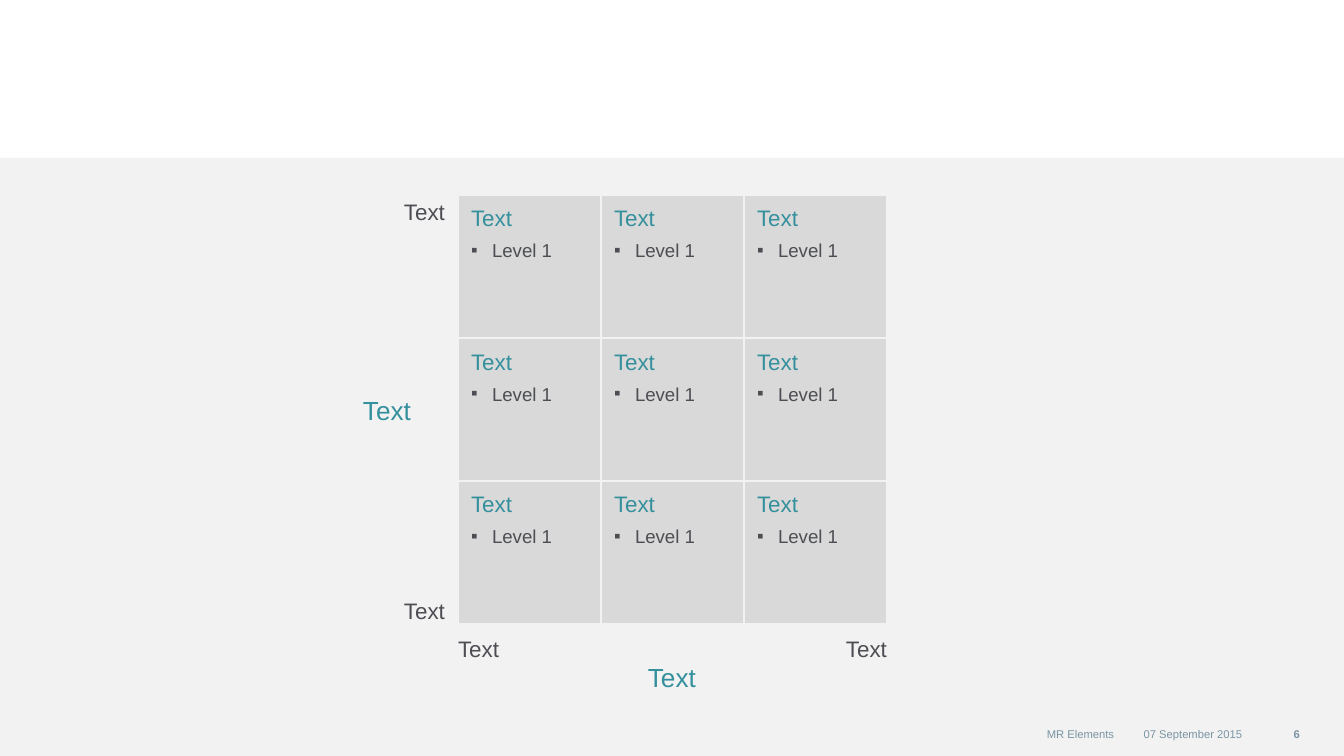
from lxml.etree import SubElement
from pptx import Presentation
from pptx.dml.color import RGBColor
from pptx.enum.shapes import MSO_SHAPE
from pptx.enum.text import MSO_ANCHOR, MSO_AUTO_SIZE, PP_ALIGN
from pptx.oxml.ns import qn
from pptx.util import Pt

EMU_PER_PX = 914400 / 134.4
SLIDE_W, SLIDE_H = 1344, 756
GRID_LEFT, GRID_TOP, CELL, COUNT = 458, 195, 143, 3
GRID_END = GRID_LEFT + COUNT * CELL
GRID_BOTTOM = GRID_TOP + COUNT * CELL

COLORS = {
    "panel": "F2F2F2",
    "cell": "D9D9D9",
    "teal": "34909C",
    "dark": "4D4E53",
    "footer": "7A94A3",
}
HEADING = {"size": Pt(12), "color": "teal"}
BULLET = {"size": Pt(10), "color": "dark"}
END_LABEL = {"size": Pt(12), "color": "dark"}
AXIS_TITLE = {"size": Pt(14), "color": "teal"}
FOOTER = {"size": Pt(6), "color": "footer"}

LEFT, CENTER, RIGHT = PP_ALIGN.LEFT, PP_ALIGN.CENTER, PP_ALIGN.RIGHT
TOP, MIDDLE, BOTTOM = MSO_ANCHOR.TOP, MSO_ANCHOR.MIDDLE, MSO_ANCHOR.BOTTOM


def px(value):
    return round(value * EMU_PER_PX)


def rgb(name):
    return RGBColor.from_string(COLORS[name])


def set_frame(tf, insets, anchor):
    """Set the insets (left, top, right, bottom) and the vertical anchor."""
    for side, inset in zip(("left", "top", "right", "bottom"), insets):
        setattr(tf, f"margin_{side}", px(inset))
    tf.vertical_anchor = anchor


def add_text(p, text, style):
    r = p.add_run()
    r.text = text
    for name, value in {"name": "Arial", **style}.items():
        if name == "color":
            r.font.color.rgb = rgb(value)
        else:
            setattr(r.font, name, value)


def set_bullet(p):
    pPr = p._p.get_or_add_pPr()
    pPr.set("marL", str(px(21)))
    pPr.set("indent", str(-px(21)))
    SubElement(pPr, qn("a:buFont"), typeface="Arial")
    SubElement(pPr, qn("a:buChar"), char="▪")


def add_rect(slide, box, fill):
    sp = slide.shapes.add_shape(MSO_SHAPE.RECTANGLE, *map(px, box))
    sp.shadow.inherit = False
    sp.fill.solid()
    sp.fill.fore_color.rgb = rgb(fill)
    sp.line.fill.background()
    return sp


def add_cell(slide, row, col):
    box = (GRID_LEFT + col * CELL, GRID_TOP + row * CELL, CELL, CELL)
    sp = add_rect(slide, box, "cell")
    sp.line.color.rgb = rgb("panel")
    sp.line.width = Pt(1)
    tf = sp.text_frame
    tf.word_wrap = True
    set_frame(tf, (13, 7, 13, 7), TOP)
    heading, item = tf.paragraphs[0], tf.add_paragraph()
    for p in (heading, item):
        for name, value in {"alignment": LEFT, "line_spacing": 1.1,
                            "space_after": Pt(3)}.items():
            setattr(p, name, value)
    set_bullet(item)
    add_text(heading, "Text", HEADING)
    add_text(item, "Level 1", BULLET)


def add_box(slide, box, text, style, align, anchor, insets):
    sp = slide.shapes.add_textbox(*map(px, box))
    tf = sp.text_frame
    set_frame(tf, insets, anchor)
    p = tf.paragraphs[0]
    p.alignment = align
    add_text(p, text, style)
    return tf


def add_label(slide, *args):
    """Add an axis label that grows with its text."""
    tf = add_box(slide, *args)
    tf.word_wrap = False
    tf.auto_size = MSO_AUTO_SIZE.SHAPE_TO_FIT_TEXT
    tf.paragraphs[0].line_spacing = 1.1


def add_footer(slide, left, width, text, style):
    box = (left, 719, width, 30)
    tf = add_box(slide, box, text, style, RIGHT, MIDDLE, (0, 0, 0, 0))
    tf.word_wrap = True


def main():
    prs = Presentation()
    prs.slide_width, prs.slide_height = px(SLIDE_W), px(SLIDE_H)
    slide = prs.slides.add_slide(prs.slide_layouts[6])

    add_rect(slide, (0, 158, SLIDE_W, SLIDE_H - 158), "panel")
    for row in range(COUNT):
        for col in range(COUNT):
            add_cell(slide, row, col)

    center_x = (GRID_LEFT + GRID_END) // 2
    center_y = (GRID_TOP + GRID_BOTTOM) // 2
    labels = [
        ((GRID_LEFT, 625, 55, 50), END_LABEL, LEFT, TOP, (0, 7, 13, 13)),
        ((GRID_END - 55, 625, 55, 50), END_LABEL, RIGHT, TOP, (13, 7, 0, 13)),
        ((center_x - 38, GRID_BOTTOM, 76, 97), AXIS_TITLE, CENTER, TOP,
         (13, 47, 13, 13)),
        ((GRID_LEFT - 68, GRID_BOTTOM - 43, 68, 43), END_LABEL, RIGHT, BOTTOM,
         (13, 13, 13, 0)),
        ((GRID_LEFT - 68, GRID_TOP, 68, 43), END_LABEL, RIGHT, TOP,
         (13, 0, 13, 13)),
        ((GRID_LEFT - 110, center_y - 31, 110, 62), AXIS_TITLE, RIGHT, MIDDLE,
         (13, 13, 47, 13)),
    ]
    for box, style, align, anchor, insets in labels:
        add_label(slide, box, "Text", style, align, anchor, insets)

    add_footer(slide, 1120, 122, "07 September 2015", FOOTER)
    add_footer(slide, 585, 529, "MR Elements", FOOTER)
    add_footer(slide, 1242, 58, "6", {**FOOTER, "bold": True})
    prs.save("out.pptx")


if __name__ == "__main__":
    main()
